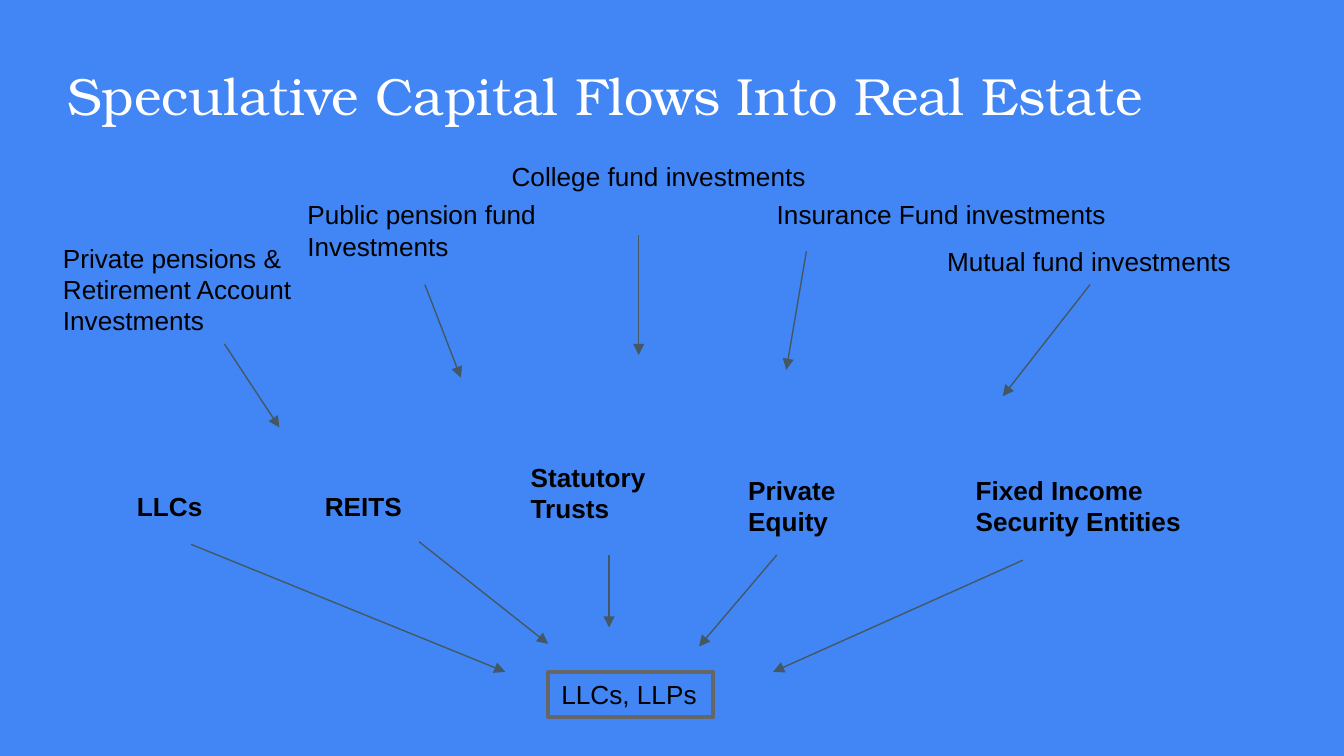
from lxml import etree
from pptx import Presentation
from pptx import util as u
from pptx.dml.color import RGBColor
from pptx.enum import shapes, text
from pptx.oxml import ns

BLUE = RGBColor(0x42, 0x85, 0xF4)
WHITE = RGBColor(0xFF, 0xFF, 0xFF)
BLACK = RGBColor(0x00, 0x00, 0x00)
SLATE = RGBColor(0x43, 0x58, 0x63)
GRAY = RGBColor(0x66, 0x66, 0x66)

GROW = text.MSO_AUTO_SIZE.SHAPE_TO_FIT_TEXT
FIXED = text.MSO_AUTO_SIZE.NONE

# Text, left, top, width, height, wrap (cm)
FUNDS = [
    ("Private pensions &\nRetirement Account\nInvestments", 0.94, 4.45, 5.03, 2.64, False),
    ("Public pension fund\nInvestments", 5.56, 3.63, 4.85, 1.45, False),
    ("College fund investments", 9.42, 2.9, 6.5, 0.86, True),
    ("Insurance Fund investments", 14.43, 3.63, 6.76, 0.86, False),
    ("Mutual fund investments", 17.65, 4.52, 5.89, 0.86, False),
]
# Text, left, top, width, height (cm)
ENTITIES = [
    ("LLCs", 2.34, 9.14, 2.95, 0.86),
    ("REITS", 5.89, 9.14, 2.36, 0.86),
    ("Statutory Trusts", 9.78, 8.59, 2.72, 2.06),
    ("Private\nEquity", 13.89, 8.84, 3.91, 1.45),
    ("Fixed Income Security Entities", 18.19, 8.84, 5.36, 2.06),
]
# Start x, start y, end x, end y (cm)
FUND_ARROWS = [
    (4.24, 6.5, 5.28, 8.08),
    (8.03, 5.38, 8.71, 7.14),
    (12.07, 4.45, 12.07, 6.71),
    (15.24, 4.75, 14.86, 6.99),
    (20.6, 5.38, 18.95, 7.49),
]
ENTITY_ARROWS = [
    (3.61, 10.29, 9.55, 12.7),
    (7.92, 10.24, 10.36, 12.17),
    (11.51, 10.49, 11.51, 11.86),
    (14.68, 10.49, 13.21, 12.22),
    (19.33, 10.59, 14.61, 12.7),
]


class FlowSlide:
    title_font = {"name": "TeX Gyre Bonum", "size": u.Pt(28), "bold": False}
    body_font = {"name": "Arial", "size": u.Pt(14), "bold": False}

    def __init__(self, presentation):
        self.slide = presentation.slides.add_slide(presentation.slide_layouts[5])
        fill = self.slide.background.fill
        fill.solid()
        fill.fore_color.rgb = BLUE

    def format_text(self, shape, wording, font, color, frame_format):
        frame = shape.text_frame
        frame.text = wording
        for name, value in frame_format.items():
            setattr(frame, name, value)
        for paragraph in frame.paragraphs:
            paragraph.alignment = text.PP_ALIGN.LEFT
            for run in paragraph.runs:
                for name, value in font.items():
                    setattr(run.font, name, value)
                run.font.color.rgb = color

    def title(self, wording, left, top, width, height):
        shape = self.slide.shapes.title
        place = {"left": left, "top": top, "width": width, "height": height}
        for name, value in place.items():
            setattr(shape, name, u.Cm(value))
        sides = ("left", "top", "right", "bottom")
        frame_format = {f"margin_{side}": u.Cm(0.25) for side in sides}
        frame_format.update(vertical_anchor=text.MSO_ANCHOR.BOTTOM,
                            word_wrap=True, auto_size=FIXED)
        self.format_text(shape, wording, self.title_font, WHITE, frame_format)

    def label(self, wording, *place, bold=False, wrap=True, auto_size=GROW):
        shape = self.slide.shapes.add_textbox(*map(u.Cm, place))
        self.format_text(shape, wording, {**self.body_font, "bold": bold}, BLACK,
                         {"word_wrap": wrap, "auto_size": auto_size})

    def box(self, wording, *place):
        shape = self.slide.shapes.add_shape(
            shapes.MSO_SHAPE.RECTANGLE, *map(u.Cm, place))
        shape.shadow.inherit = False
        shape.fill.background()
        shape.line.color.rgb = GRAY
        shape.line.width = u.Pt(2.25)
        self.format_text(shape, wording, self.body_font, BLACK,
                         {"word_wrap": True, "auto_size": GROW,
                          "vertical_anchor": text.MSO_ANCHOR.TOP})

    def arrow(self, *ends):
        connector = self.slide.shapes.add_connector(
            shapes.MSO_CONNECTOR.STRAIGHT, *map(u.Cm, ends))
        connector.line.color.rgb = SLATE
        connector.line.width = u.Pt(0.75)
        properties = connector.element.spPr
        line = properties.find(ns.qn("a:ln"))
        etree.SubElement(line, ns.qn("a:tailEnd"), type="triangle")
        etree.SubElement(properties, ns.qn("a:effectLst"))


def main():
    presentation = Presentation()
    presentation.slide_width = u.Cm(25.4)
    presentation.slide_height = u.Cm(14.29)
    flow = FlowSlide(presentation)

    # Title
    flow.title("Speculative Capital Flows Into Real Estate", 1.02, 0.71, 22.99, 1.93)

    # Investment entities
    for wording, *place in ENTITIES:
        flow.label(wording, *place, bold=True, auto_size=FIXED)

    # Sources of capital
    for wording, *place, wrap in FUNDS:
        flow.label(wording, *place, wrap=wrap)

    # Flows of capital
    for ends in ENTITY_ARROWS + FUND_ARROWS:
        flow.arrow(*ends)

    # Final holders
    flow.box("LLCs, LLPs", 10.36, 12.7, 3.12, 0.86)

    presentation.save("out.pptx")


if __name__ == "__main__":
    main()
